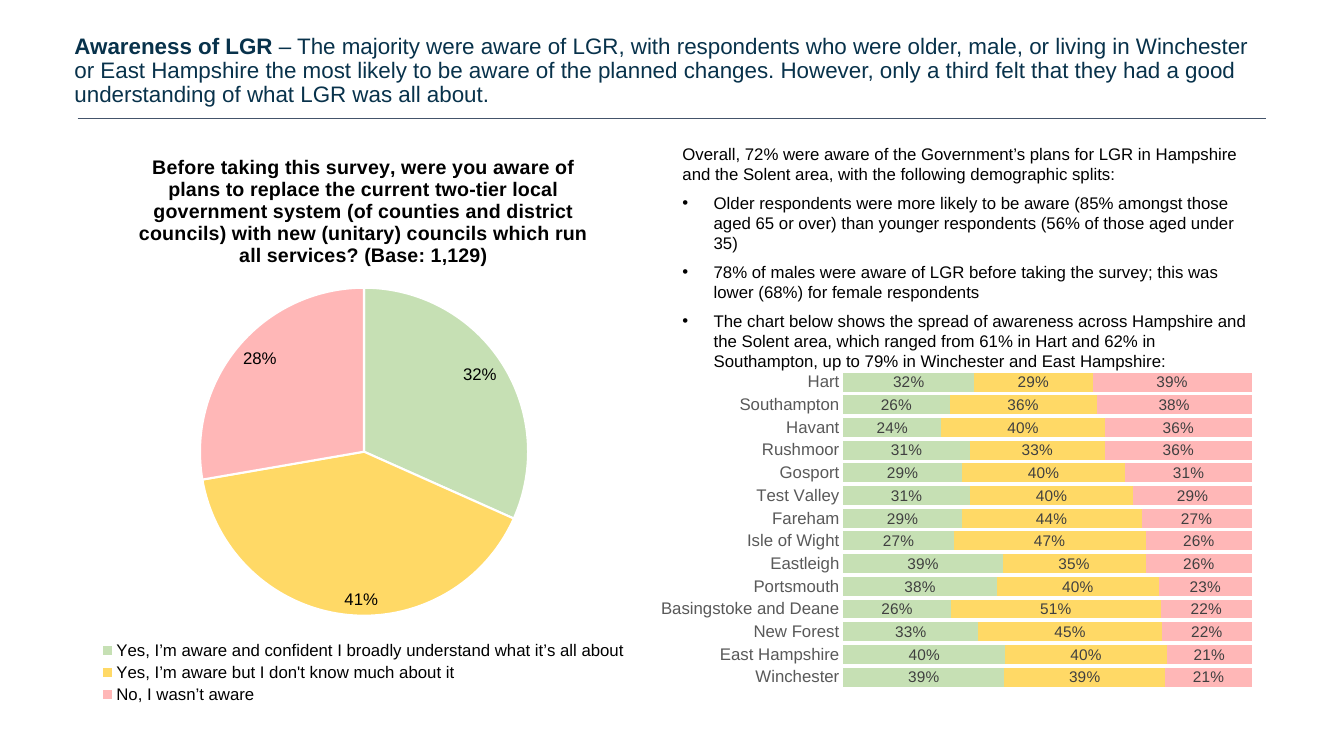
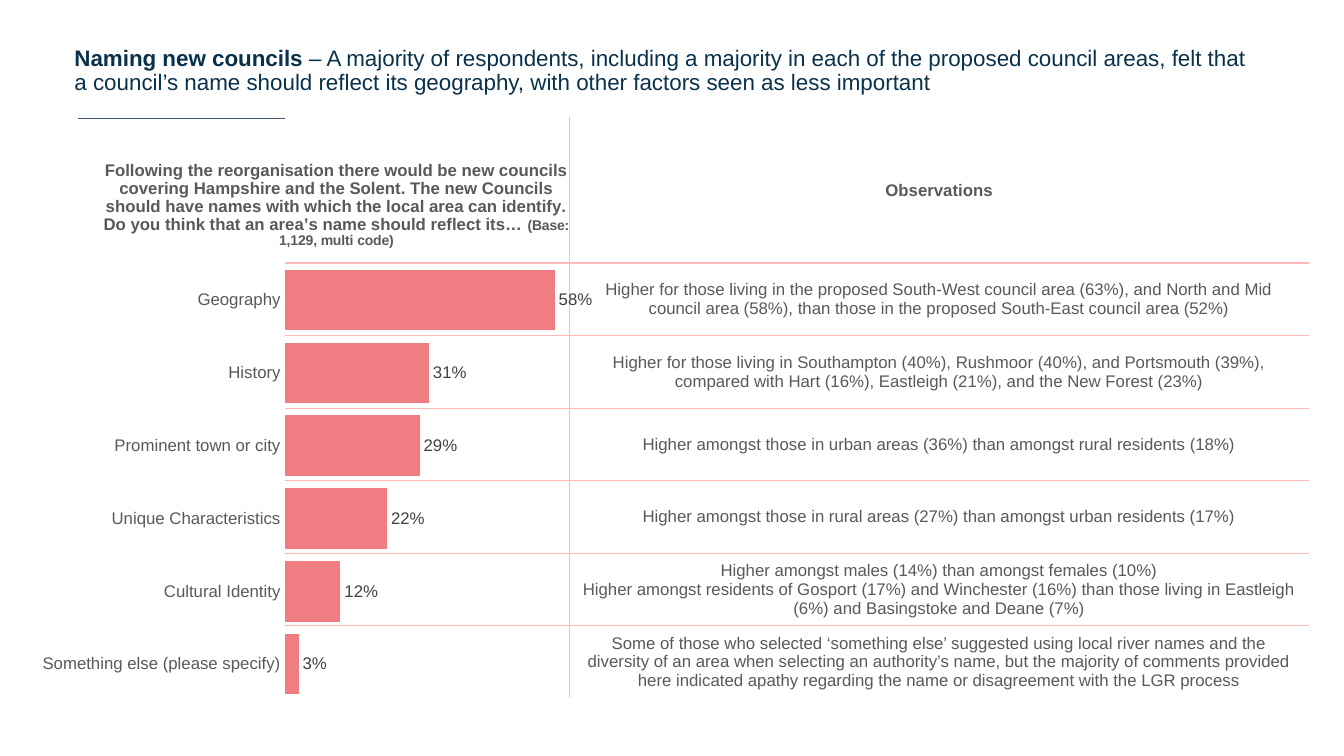
from lxml import etree
from pptx import Presentation
from pptx.chart.data import CategoryChartData
from pptx.dml.color import RGBColor
from pptx.enum.chart import XL_CHART_TYPE, XL_LABEL_POSITION, XL_LEGEND_POSITION, XL_TICK_MARK
from pptx.enum.shapes import MSO_CONNECTOR
from pptx.enum.text import MSO_ANCHOR, PP_ALIGN
from pptx.oxml.ns import qn
from pptx.util import Inches, Pt

COLOURS = {
    "title": "08324B", "rule": "44546A", "text": "000000", "grey": "595959", "label": "404040",
    "green": "C6E0B4", "yellow": "FFD966", "pink": "FFB7B7", "coral": "EF7D82", "white": "FFFFFF",
}
ANSWER_COLOURS = ["green", "yellow", "pink"]
FONT = "Arial"


def style(font, size, colour, bold=False):
    font.name = FONT
    font.size = Pt(size)
    font.bold = bold
    font.color.rgb = RGBColor.from_string(COLOURS[colour])


def place(parent, **fractions):
    """Fix a chart part (plot area or title) at fractions of the chart size."""
    layout = parent.find(qn("c:layout"))
    if layout is None:
        layout = etree.Element(qn("c:layout"))
        parent.insert(0, layout)
    manual = etree.SubElement(layout, qn("c:manualLayout"))
    settings = {"xMode": "edge", "yMode": "edge", **fractions}
    if "w" in fractions:
        settings = {"layoutTarget": "inner", **settings}
    for name, value in settings.items():
        etree.SubElement(manual, qn(f"c:{name}")).set("val", str(value))


PAGES = [
    ("Awareness of LGR",
     " – The majority were aware of LGR, with respondents who were older, male, or living in "
     "Winchester or East Hampshire the most likely to be aware of the planned changes. However, "
     "only a third felt that they had a good understanding of what LGR was all about."),
    ("Naming new councils",
     " – A majority of respondents, including a majority in each of the proposed council areas, "
     "felt that a council’s name should reflect its geography, with other factors seen as less "
     "important"),
]

AWARENESS = {
    "Yes, I’m aware and confident I broadly understand what it’s all about": 0.32,
    "Yes, I’m aware but I don't know much about it": 0.41,
    "No, I wasn’t aware": 0.28,
}
AWARENESS_QUESTION = (
    "Before taking this survey, were you aware of plans to replace the current two-tier local "
    "government system (of counties and district councils) with new (unitary) councils which run "
    "all services? (Base: 1,129)")
FINDINGS = [
    "Overall, 72% were aware of the Government’s plans for LGR in Hampshire and the Solent area, "
    "with the following demographic splits:",
    "Older respondents were more likely to be aware (85% amongst those aged 65 or over) than "
    "younger respondents (56% of those aged under 35)",
    "78% of males were aware of LGR before taking the survey; this was lower (68%) for female "
    "respondents",
    "The chart below shows the spread of awareness across Hampshire and the Solent area, which "
    "ranged from 61% in Hart and 62% in Southampton, up to 79% in Winchester and East Hampshire:",
]
AREAS = {
    "Hart": (0.32, 0.29, 0.39),
    "Southampton": (0.26, 0.36, 0.38),
    "Havant": (0.24, 0.40, 0.36),
    "Rushmoor": (0.31, 0.33, 0.36),
    "Gosport": (0.29, 0.40, 0.31),
    "Test Valley": (0.31, 0.40, 0.29),
    "Fareham": (0.29, 0.44, 0.27),
    "Isle of Wight": (0.27, 0.47, 0.26),
    "Eastleigh": (0.39, 0.35, 0.26),
    "Portsmouth": (0.38, 0.40, 0.23),
    "Basingstoke and Deane": (0.26, 0.51, 0.22),
    "New Forest": (0.33, 0.45, 0.22),
    "East Hampshire": (0.40, 0.40, 0.21),
    "Winchester": (0.39, 0.39, 0.21),
}

NAMING_QUESTION = (
    "Following the reorganisation there would be new councils covering Hampshire and the Solent. "
    "The new Councils should have names with which the local area can identify. Do you think that "
    "an area’s name should reflect its… ")
NAMING_BASE = "(Base: 1,129, multi code)"
NAMING = {
    "Geography": 0.58, "History": 0.31, "Prominent town or city": 0.29,
    "Unique Characteristics": 0.22, "Cultural Identity": 0.12,
    "Something else (please specify)": 0.03,
}
OBSERVATIONS = [
    "Observations",
    "Higher for those living in the proposed South-West council area (63%), and North and Mid "
    "council area (58%), than those in the proposed South-East council area (52%)",
    "Higher for those living in Southampton (40%), Rushmoor (40%), and Portsmouth (39%), compared "
    "with Hart (16%), Eastleigh (21%), and the New Forest (23%)",
    "Higher amongst those in urban areas (36%) than amongst rural residents (18%)",
    "Higher amongst those in rural areas (27%) than amongst urban residents (17%)",
    "Higher amongst males (14%) than amongst females (10%)\n"
    "Higher amongst residents of Gosport (17%) and Winchester (16%) than those living in "
    "Eastleigh (6%) and Basingstoke and Deane (7%)",
    "Some of those who selected ‘something else’ suggested using local river names and the "
    "diversity of an area when selecting an authority’s name, but the majority of comments "
    "provided here indicated apathy regarding the name or disagreement with the LGR process",
]

deck = Presentation()
deck.slide_width = Inches(13.33)
deck.slide_height = Inches(7.5)

# Title and rule on both pages
pages = []
for topic, message in PAGES:
    page = deck.slides.add_slide(deck.slide_layouts[6])
    pages.append(page)
    box = page.shapes.add_textbox(Inches(0.64), Inches(0), Inches(11.93), Inches(1.41))
    box.text_frame.word_wrap = True
    box.text_frame.vertical_anchor = MSO_ANCHOR.MIDDLE
    paragraph = box.text_frame.paragraphs[0]
    paragraph.line_spacing = 0.9
    for text, bold in ((topic, True), (message, False)):
        span = paragraph.add_run()
        span.text = text
        style(span.font, 16, "title", bold)
    rule = page.shapes.add_connector(
        MSO_CONNECTOR.STRAIGHT, Inches(0.77), Inches(1.17), Inches(12.56), Inches(1.17))
    rule.line.color.rgb = RGBColor.from_string(COLOURS["rule"])
    rule.line.width = Pt(0.5)
    etree.SubElement(rule._element.spPr, qn("a:effectLst"))
awareness_page, naming_page = pages

# Awareness pie
data = CategoryChartData(number_format="0%")
data.categories = list(AWARENESS)
data.add_series("Series 1", list(AWARENESS.values()))
pie = awareness_page.shapes.add_chart(
    XL_CHART_TYPE.PIE, Inches(0.77), Inches(1.33), Inches(5.67), Inches(5.69), data).chart
style(pie.font, 10, "text")
pie.has_title = True
pie.chart_title.text_frame.text = AWARENESS_QUESTION
style(pie.chart_title.text_frame.paragraphs[0].runs[0].font, 14, "text", True)
pie.has_legend = True
pie.legend.position = XL_LEGEND_POSITION.BOTTOM
pie.legend.include_in_layout = False
style(pie.legend.font, 12, "text")
place(pie.plots[0]._element.getparent(), x=0.214, y=0.268, w=0.574, h=0.572)
for index, colour in enumerate(ANSWER_COLOURS):
    wedge = pie.plots[0].series[0].points[index].format
    wedge.fill.solid()
    wedge.fill.fore_color.rgb = RGBColor.from_string(COLOURS[colour])
    wedge.line.color.rgb = RGBColor.from_string(COLOURS["white"])
    wedge.line.width = Pt(1.5)
labels = pie.plots[0].series[0].data_labels
labels.show_value = True
labels.number_format = "0%"
labels.number_format_is_linked = False
labels.position = XL_LABEL_POSITION.INSIDE_END
style(labels.font, 12, "text")

# Findings
box = awareness_page.shapes.add_textbox(Inches(6.67), Inches(1.38), Inches(5.89), Inches(2.17))
box.text_frame.word_wrap = True
box.text_frame.text = "\n".join(FINDINGS)
for index, paragraph in enumerate(box.text_frame.paragraphs):
    paragraph.space_after = Pt(6)
    if index > 0:
        properties = paragraph._p.get_or_add_pPr()
        properties.set("marL", str(Inches(0.31)))
        properties.set("indent", str(-Inches(0.31)))
        etree.SubElement(properties, qn("a:buFont")).set("typeface", FONT)
        etree.SubElement(properties, qn("a:buChar")).set("char", "•")
    style(paragraph.runs[0].font, 12, "text")

# Observations table
row_heights = [1.44] + [0.72] * 6
table = naming_page.shapes.add_table(
    len(OBSERVATIONS), 2, Inches(2.83), Inches(1.17), Inches(10.15), Inches(sum(row_heights))).table
table.first_row = False
table.horz_banding = False
table.columns[0].width = Inches(2.82)
table.columns[1].width = Inches(7.33)
last_row = len(OBSERVATIONS) - 1
for row, text in enumerate(OBSERVATIONS):
    table.rows[row].height = Inches(row_heights[row])
    for column in range(2):
        cell = table.cell(row, column)
        cell.fill.background()
        outer_edges = {"lnL": column == 0, "lnR": column == 1, "lnT": row == 0, "lnB": row == last_row}
        for position, (edge, is_outer) in enumerate(outer_edges.items()):
            line = etree.Element(qn(f"a:{edge}"), w=str(Pt(1)))
            fill = etree.SubElement(line, qn("a:solidFill"))
            colour = COLOURS["white" if is_outer else "pink"]
            etree.SubElement(fill, qn("a:srgbClr")).set("val", colour)
            cell._tc.get_or_add_tcPr().insert(position, line)
    cell.vertical_anchor = MSO_ANCHOR.MIDDLE
    cell.text_frame.text = text
    for paragraph in cell.text_frame.paragraphs:
        paragraph.alignment = PP_ALIGN.CENTER
        style(paragraph.runs[0].font, 12, "grey", row == 0)

# Bar charts: page, type, frame, categories, series, colours, label size, axis maximum, plot area
BAR_CHARTS = [
    (awareness_page, XL_CHART_TYPE.BAR_STACKED_100, (6.45, 3.65, 6.12, 3.21), AREAS,
     zip(*AREAS.values()), ANSWER_COLOURS, 11, 1, dict(x=0.313, y=0.009, w=0.662, h=0.982)),
    (naming_page, XL_CHART_TYPE.BAR_CLUSTERED, (0.32, 1.33, 5.89, 5.62), NAMING,
     [NAMING.values()], ["coral"], 12, 0.7, dict(x=0.425, y=0.229, w=0.549, h=0.771)),
]
for page, kind, frame, categories, rows, colours, label_size, maximum, plot_area in BAR_CHARTS:
    data = CategoryChartData(number_format="0%")
    data.categories = list(categories)
    for number, values in enumerate(rows, 1):
        data.add_series(f"Series {number}", list(values))
    chart = page.shapes.add_chart(kind, *map(Inches, frame), data).chart
    style(chart.font, 12, "text")
    chart.has_legend = False
    chart.has_title = page is naming_page
    if chart.has_title:
        paragraph = chart.chart_title.text_frame.paragraphs[0]
        paragraph.line_spacing = 0.9
        for text, size in ((NAMING_QUESTION, 12), (NAMING_BASE, 10)):
            span = paragraph.add_run()
            span.text = text
            style(span.font, size, "grey", True)
        place(chart.chart_title._element, x=0.115, y=0.04)

    axis = chart.category_axis
    axis.reverse_order = True
    axis.major_tick_mark = XL_TICK_MARK.NONE
    axis.format.line.fill.background()
    style(axis.tick_labels.font, 12, "grey")
    chart.value_axis.visible = False
    chart.value_axis.has_major_gridlines = False
    chart.value_axis.minimum_scale = 0
    chart.value_axis.maximum_scale = maximum

    plot = chart.plots[0]
    plot.gap_width = 20
    plot.vary_by_categories = False
    place(plot._element.getparent(), **plot_area)
    stacked = kind == XL_CHART_TYPE.BAR_STACKED_100
    if stacked:
        plot.overlap = 100
    for series, colour in zip(plot.series, colours):
        series.format.fill.solid()
        series.format.fill.fore_color.rgb = RGBColor.from_string(COLOURS[colour])
        labels = series.data_labels
        labels.show_value = True
        labels.number_format = "0%"
        labels.number_format_is_linked = False
        labels.position = XL_LABEL_POSITION.CENTER if stacked else XL_LABEL_POSITION.OUTSIDE_END
        style(labels.font, label_size, "label")

deck.save("out.pptx")
